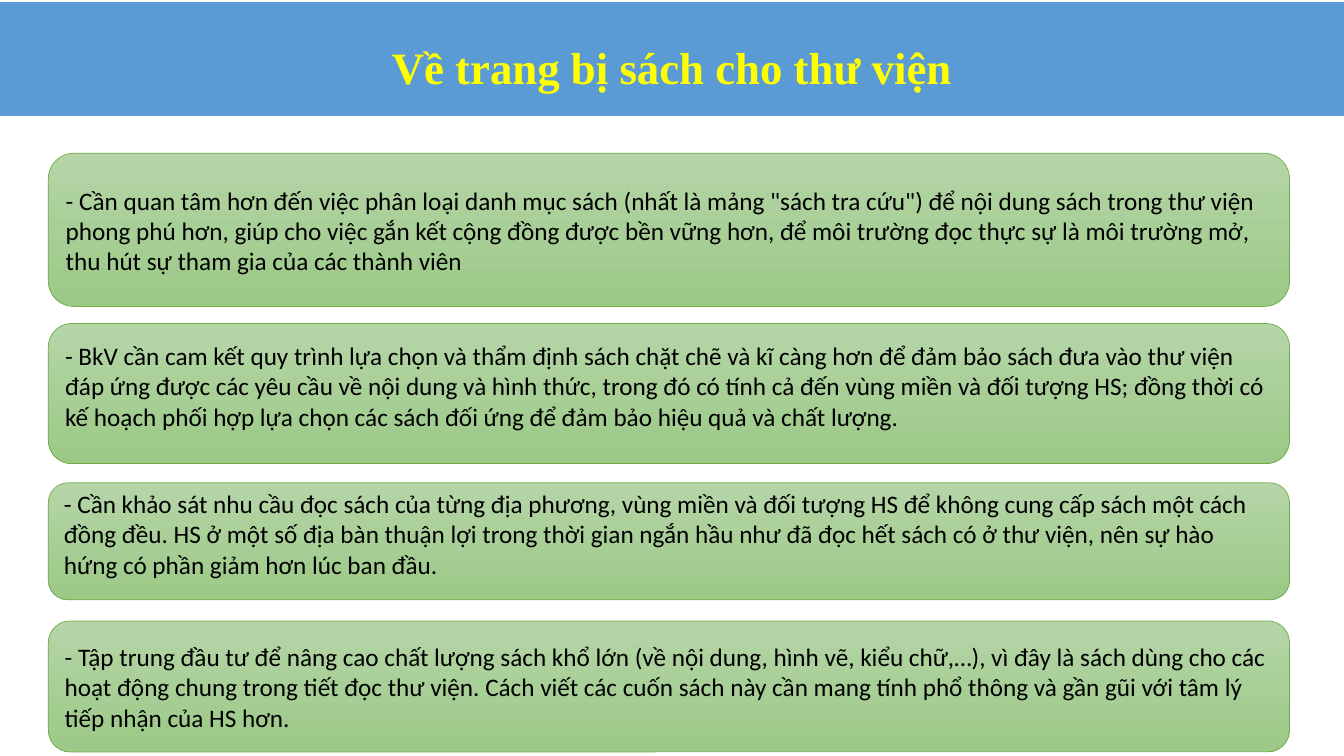
from pptx import Presentation
from pptx.dml.color import RGBColor
from pptx.enum.shapes import MSO_SHAPE
from pptx.enum.text import MSO_ANCHOR, MSO_AUTO_SIZE, PP_ALIGN
from pptx.util import Inches, Pt

TITLE_ONLY = 5
GRID = 100  # columns and rows across the slide

# Each card: top row, height in rows, space above the text in inches, text
CARDS = [
    (20.27, 20.27, 0.24,
     '- Cần quan tâm hơn đến việc phân loại danh mục sách (nhất là mảng "sách tra cứu") '
     "để nội dung sách trong thư viện phong phú hơn, giúp cho việc gắn kết cộng đồng được "
     "bền vững hơn, để môi trường đọc thực sự là môi trường mở, thu hút sự tham gia của "
     "các thành viên"),
    (42.8, 18.53, 0.1,
     "- BkV cần cam kết quy trình lựa chọn và thẩm định sách chặt chẽ và kĩ càng hơn để "
     "đảm bảo sách đưa vào thư viện đáp ứng được các yêu cầu về nội dung và hình thức, "
     "trong đó có tính cả đến vùng miền và đối tượng HS; đồng thời có kế hoạch phối hợp "
     "lựa chọn các sách đối ứng để đảm bảo hiệu quả và chất lượng."),
    (63.87, 15.47, 0,
     "- Cần khảo sát nhu cầu đọc sách của từng địa phương, vùng miền và đối tượng HS để "
     "không cung cấp sách một cách đồng đều. HS ở một số địa bàn thuận lợi trong thời gian "
     "ngắn hầu như đã đọc hết sách có ở thư viện, nên sự hào hứng có phần giảm hơn lúc "
     "ban đầu."),
    (82.13, 17.33, 0.14,
     "- Tập trung đầu tư để nâng cao chất lượng sách khổ lớn (về nội dung, hình vẽ, kiểu "
     "chữ,…), vì đây là sách dùng cho các hoạt động chung trong tiết đọc thư viện. Cách "
     "viết các cuốn sách này cần mang tính phổ thông và gần gũi với tâm lý tiếp nhận của "
     "HS hơn."),
]


def color(hex_string):
    return RGBColor.from_string(hex_string)


def write(shape, text, *, font, size, ink, bold=False, align=PP_ALIGN.LEFT,
          anchor=MSO_ANCHOR.TOP, top=0.05, spacing=1.0):
    frame = shape.text_frame
    frame.word_wrap = True
    frame.auto_size = MSO_AUTO_SIZE.NONE
    frame.vertical_anchor = anchor
    frame.margin_left = frame.margin_right = Inches(0.1)
    frame.margin_top, frame.margin_bottom = Inches(top), Inches(0)
    paragraph = frame.paragraphs[0]
    paragraph.alignment = align
    paragraph.line_spacing = spacing
    run = paragraph.add_run()
    run.text = text
    run.font.name, run.font.size, run.font.bold = font, Pt(size), bold
    run.font.color.rgb = color(ink)


class LibrarySlide:
    """Holds the style and the current slide."""

    banner, banner_ink = "5B9BD5", "FFFF00"
    card_top, card_bottom, card_line, card_ink = "B5D5A7", "9CC987", "70AD47", "000000"
    title_font, body_font = "Times New Roman", "Calibri"

    def __init__(self, presentation):
        self.column = presentation.slide_width / GRID
        self.row = presentation.slide_height / GRID
        self.slide = presentation.slides.add_slide(presentation.slide_layouts[TITLE_ONLY])

    def place(self, left, top, width, height):
        return (round(left * self.column), round(top * self.row),
                round(width * self.column), round(height * self.row))

    def title(self, text, *box):
        shape = self.slide.shapes.title
        shape.left, shape.top, shape.width, shape.height = self.place(*box)
        shape.fill.solid()
        shape.fill.fore_color.rgb = color(self.banner)
        write(shape, text, font=self.title_font, size=32, ink=self.banner_ink, bold=True,
              align=PP_ALIGN.CENTER, anchor=MSO_ANCHOR.MIDDLE, top=0.04, spacing=1.2)

    def card(self, text, *box, space_above):
        shape = self.slide.shapes.add_shape(MSO_SHAPE.ROUNDED_RECTANGLE, *self.place(*box))
        shape.shadow.inherit = False
        shape.fill.gradient()
        shape.fill.gradient_angle = 270
        for stop, shade in zip(shape.fill.gradient_stops, (self.card_top, self.card_bottom)):
            stop.color.rgb = color(shade)
        shape.line.color.rgb = color(self.card_line)
        shape.line.width = Pt(0.5)
        write(shape, text, font=self.body_font, size=18, ink=self.card_ink, top=space_above)


def main():
    presentation = Presentation()
    presentation.slide_width, presentation.slide_height = Inches(13.33), Inches(7.5)
    page = LibrarySlide(presentation)

    # Title banner
    page.title("Về trang bị sách cho thư viện", 0, 0.27, GRID, 15.07)

    # Recommendation cards
    for top, height, space_above, text in CARDS:
        page.card(text, 3.6, top, 92.35, height, space_above=space_above)

    presentation.save("out.pptx")


if __name__ == "__main__":
    main()
